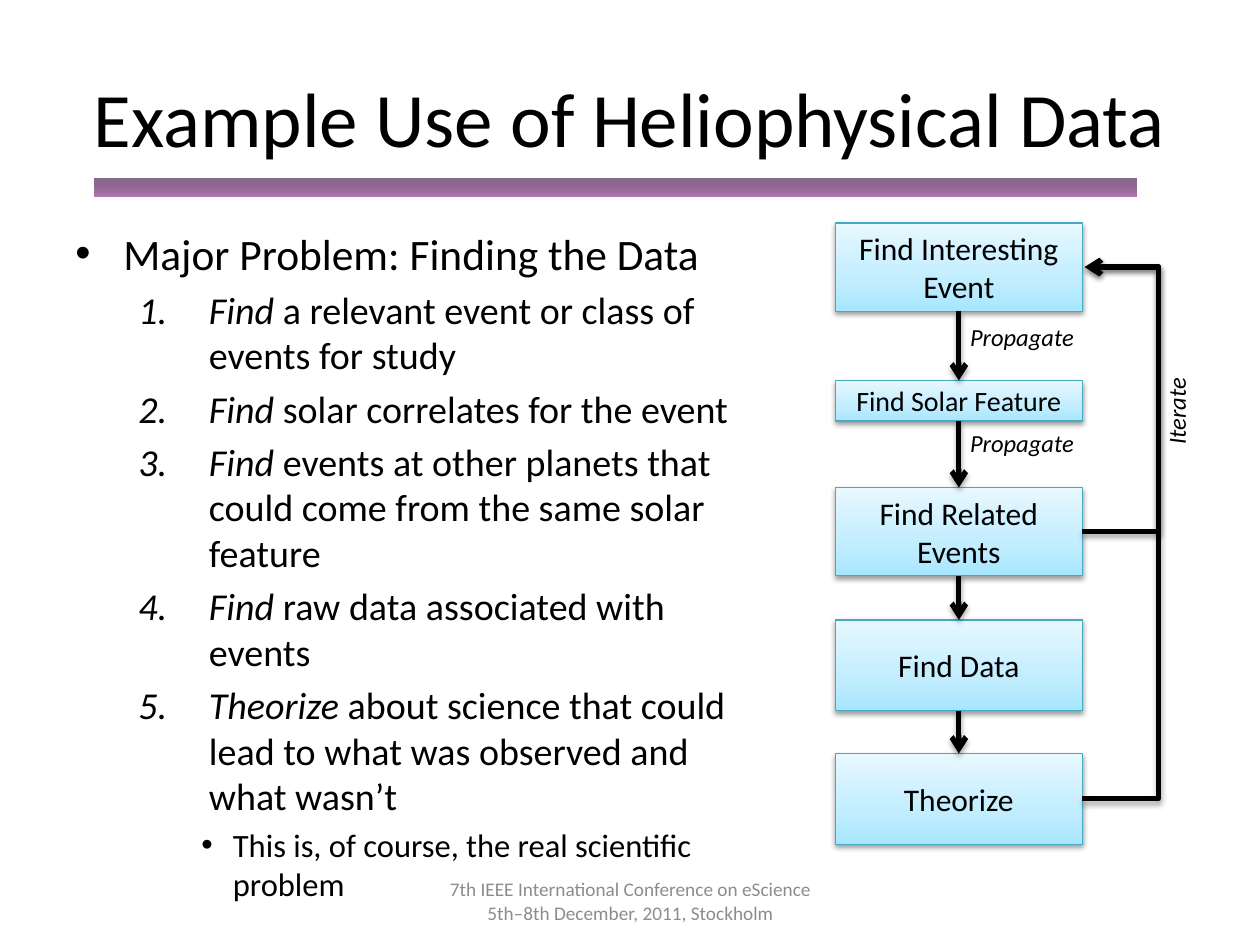
"""Build a slide on finding heliophysical data, with a list and a flow chart."""
import pptx
import pptx.dml.color
import pptx.enum.shapes
import pptx.enum.text
import pptx.oxml
import pptx.oxml.ns
import pptx.util

Inches = pptx.util.Inches
Pt = pptx.util.Pt
RGBColor = pptx.dml.color.RGBColor
SHAPE = pptx.enum.shapes.MSO_SHAPE
LINK = pptx.enum.shapes.MSO_CONNECTOR
ALIGN = pptx.enum.text.PP_ALIGN
MIDDLE = pptx.enum.text.MSO_ANCHOR.MIDDLE
qn = pptx.oxml.ns.qn

BLACK = RGBColor(0, 0, 0)
GREY = RGBColor(0x8C, 0x8C, 0x8C)
TEAL = RGBColor(0x46, 0xAA, 0xC5)
PURPLE = RGBColor(0x66, 0x00, 0x66)
MAUVE = RGBColor(0x81, 0x6A, 0x85)
SKY = RGBColor(0xA7, 0xE6, 0xFF)
PALE = RGBColor(0xC1, 0xED, 0xFF)
ICE = RGBColor(0xE7, 0xF8, 0xFF)

BAR = [(0, PURPLE, 50), (100, MAUVE, 100)]
BLUES = [(0, SKY, 100), (35, PALE, 100), (100, ICE, 100)]

LEFT, WIDE = 6.63, 1.96
RIGHT, MID = LEFT + WIDE, LEFT + WIDE / 2
STEPS = [
    ("Find Interesting Event", 1.77, 0.7, 18, SHAPE.FLOWCHART_PROCESS),
    ("Find Solar Feature", 3.02, 0.32, 16, SHAPE.FLOWCHART_PROCESS),
    ("Find Related Events", 3.87, 0.7, 18, SHAPE.FLOWCHART_PROCESS),
    ("Find Data", 4.92, 0.72, 18, SHAPE.FLOWCHART_PROCESS),
    ("Theorize", 5.98, 0.72, 18, SHAPE.RECTANGLE),
]
DOT = '<a:buChar {} char="•"/>'
NUMBER = '<a:buAutoNum {} type="arabicPeriod"/>'
STYLES = [(24.8, 0.38, -0.38, DOT), (21.7, 1.06, -0.56, NUMBER),
          (18.6, 1.25, -0.25, DOT)]
POINTS = [
    (0, "", "Major Problem: Finding the Data"),
    (1, "Find", " a relevant event or class of events for study"),
    (1, "Find", " solar correlates for the event"),
    (1, "Find", " events at other planets that could come from the same solar feature"),
    (1, "Find", " raw data associated with events"),
    (1, "Theorize", " about science that could lead to what was observed and what wasn’t"),
    (2, "", "This is, of course, the real scientific problem"),
]


def make(xml):
    """Return an element from a template that leaves room for its namespace."""
    return pptx.oxml.parse_xml(xml.format(pptx.oxml.ns.nsdecls("a")))


def style(font, size, color=BLACK, italic=False):
    """Set the look of a font."""
    font.name = "Calibri"
    font.size = Pt(size)
    font.color.rgb = color
    font.italic = italic


def write(shape, text, size, align=ALIGN.CENTER, color=BLACK, italic=False):
    """Put one styled paragraph, anchored in the middle, in a shape."""
    frame = shape.text_frame
    frame.text = text
    frame.vertical_anchor = MIDDLE
    para = frame.paragraphs[0]
    para.alignment = align
    for run in para.runs:
        style(run.font, size, color, italic)


def shade(shape, stops):
    """Fill a shape with a gradient that runs from bottom to top."""
    shape.fill.gradient()
    old = shape._element.spPr.find(qn("a:gradFill"))
    marks = "".join(
        f'<a:gs pos="{pos * 1000}"><a:srgbClr val="{color}">'
        f'<a:alpha val="{alpha * 1000}"/></a:srgbClr></a:gs>'
        for pos, color, alpha in stops)
    new = make('<a:gradFill {} rotWithShape="1"><a:gsLst>' + marks
               + '</a:gsLst><a:lin ang="16200000" scaled="0"/></a:gradFill>')
    old.getparent().replace(old, new)


def shadow(shape, gap, alpha):
    """Drop a soft black shadow below a shape."""
    shape._element.spPr.append(make(
        f'<a:effectLst {{}}><a:outerShdw blurRad="{Pt(3.1)}" dist="{Pt(gap)}" '
        'dir="5400000" rotWithShape="0"><a:srgbClr val="000000">'
        f'<a:alpha val="{alpha * 1000}"/></a:srgbClr></a:outerShdw></a:effectLst>'))


def add_bar(slide):
    """Add the rule below the title."""
    bar = slide.shapes.add_shape(
        SHAPE.RECTANGLE, Inches(0.75), Inches(1.42), Inches(8.27), Inches(0.14))
    bar.shadow.inherit = False
    shade(bar, BAR)
    bar.line.fill.background()


def add_title(slide, text):
    """Place and fill the title."""
    title = slide.shapes.title
    title.left, title.top = Inches(0.5), Inches(0.3)
    title.width, title.height = Inches(9), Inches(1.25)
    write(title, text, 44)


def add_list(slide):
    """Add the list of points."""
    box = slide.shapes.add_textbox(
        Inches(0.5), Inches(1.75), Inches(5.41), Inches(4.95))
    frame = box.text_frame
    frame.word_wrap = True
    for i, (level, lead, rest) in enumerate(POINTS):
        para = frame.add_paragraph() if i else frame.paragraphs[0]
        size, left, hang, mark = STYLES[level]
        para.level = level
        para.space_before = Pt(size * 0.2 if i else 0)
        props = para._p.get_or_add_pPr()
        props.set("marL", str(Inches(left)))
        props.set("indent", str(Inches(hang)))
        if mark == DOT:
            props.append(make('<a:buFont {} typeface="Arial"/>'))
        props.append(make(mark))
        for text in filter(None, (lead, rest)):
            run = para.add_run()
            run.text = text
            style(run.font, size, italic=text == lead)


def add_step(slide, text, top, high, size, kind):
    """Add one box of the flow chart."""
    box = slide.shapes.add_shape(
        kind, Inches(LEFT), Inches(top), Inches(WIDE), Inches(high))
    shade(box, BLUES)
    box.line.color.rgb = TEAL
    box.line.width = Pt(0.75)
    shadow(box, 1.6, 38)
    write(box, text, size)


def add_arrow(slide, kind, start, end):
    """Add a thick arrow and return it."""
    arrow = slide.shapes.add_connector(kind, *map(Inches, start + end))
    arrow.line.color.rgb = BLACK
    arrow.line.width = Pt(3)
    arrow._element.spPr.find(qn("a:ln")).append(
        make('<a:tailEnd {} type="arrow"/>'))
    shadow(arrow, 1.8, 35)
    return arrow


def add_loop(slide, low, high):
    """Add an arrow that goes back up, round the right side."""
    loop = add_arrow(slide, LINK.ELBOW, (RIGHT, low), (RIGHT + 0.02, high))
    slots = loop._element.spPr.find(qn("a:prstGeom")).get_or_add_avLst()
    slots.append(make('<a:gd {} name="adj1" fmla="val 3000000"/>'))


def add_label(slide, text, left, top, width, turn=0):
    """Add a small italic label."""
    box = slide.shapes.add_textbox(
        Inches(left), Inches(top), Inches(width), Inches(0.34))
    box.text_frame.word_wrap = False
    box.rotation = turn
    write(box, text, 14, ALIGN.LEFT, italic=True)


def add_foot(slide, text):
    """Add the grey footer."""
    box = slide.shapes.add_textbox(
        Inches(3.42), Inches(6.95), Inches(3.17), Inches(0.4))
    box.text_frame.word_wrap = True
    write(box, text, 11, color=GREY)


def main():
    """Build and save the slide."""
    deck = pptx.Presentation()
    deck.slide_width, deck.slide_height = Inches(10), Inches(7.5)
    slide = deck.slides.add_slide(deck.slide_layouts[5])
    add_bar(slide)
    add_title(slide, "Example Use of Heliophysical Data")
    add_list(slide)
    for step in STEPS:
        add_step(slide, *step)
    for (_, top, high, *_), (_, below, *_) in zip(STEPS, STEPS[1:]):
        add_arrow(slide, LINK.STRAIGHT, (MID, top + high), (MID, below))
    for top in (2.5, 3.34):
        add_label(slide, "Propagate", 7.6, top, 1.08)
    mids = [top + high / 2 for _, top, high, *_ in STEPS]
    for i in (2, 4):
        add_loop(slide, mids[i], mids[0])
    add_label(slide, "Iterate", 8.94, 3.06, 0.79, 270)
    add_foot(slide, "7th IEEE International Conference on eScience\v"
                    "5th–8th December, 2011, Stockholm")
    deck.save("out.pptx")


if __name__ == "__main__":
    main()
